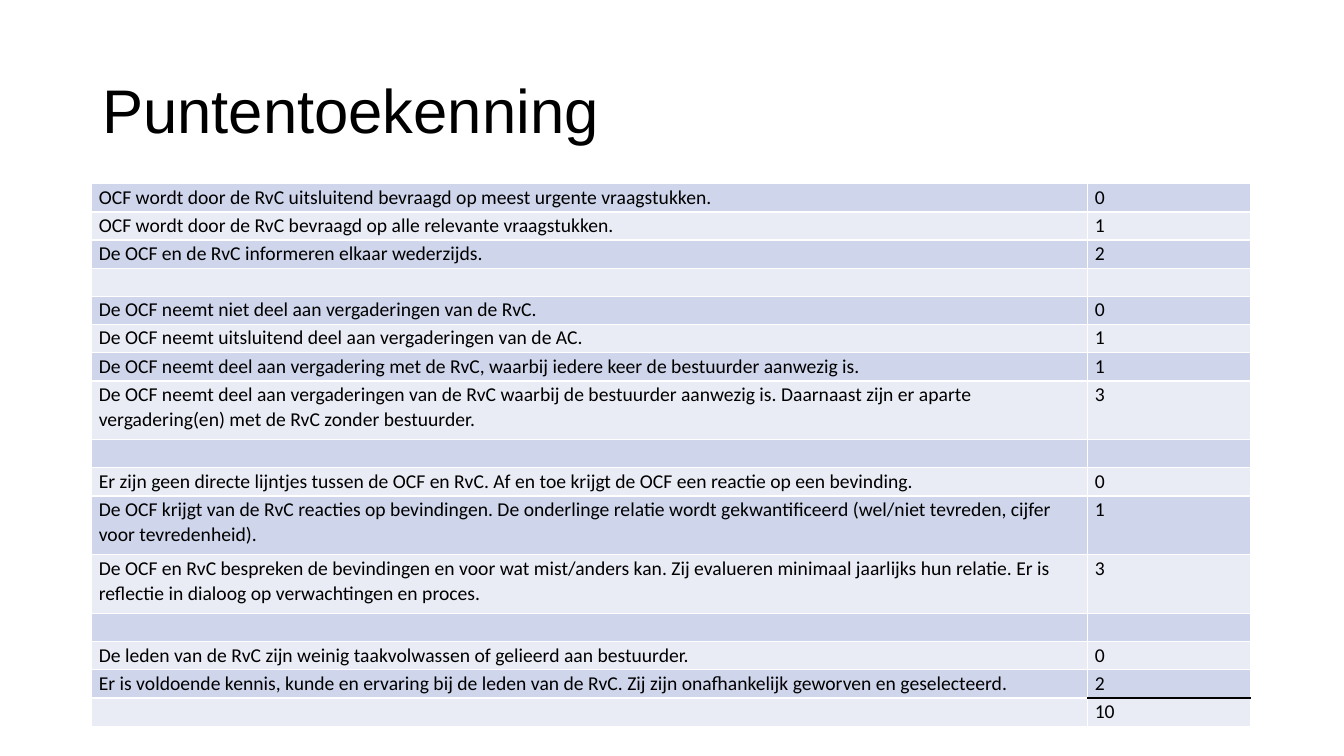
"""Build the slide 'Puntentoekenning' with its table of points."""
import lxml.etree
import pptx
import pptx.dml.color
import pptx.enum.text
import pptx.oxml.ns
import pptx.util

Cm = pptx.util.Cm
Pt = pptx.util.Pt

TITLE = "Puntentoekenning"
POINTS = [
    ("OCF wordt door de RvC uitsluitend bevraagd op meest urgente vraagstukken.", "0"),
    ("OCF wordt door de RvC bevraagd op alle relevante vraagstukken.", "1"),
    ("De OCF en de RvC informeren elkaar wederzijds.", "2"),
    ("", ""),
    ("De OCF neemt niet deel aan vergaderingen van de RvC.", "0"),
    ("De OCF neemt uitsluitend deel aan vergaderingen van de AC.", "1"),
    ("De OCF neemt deel aan vergadering met de RvC, waarbij iedere keer de bestuurder aanwezig is.", "1"),
    ("De OCF neemt deel aan vergaderingen van de RvC waarbij de bestuurder aanwezig is. "
     "Daarnaast zijn er aparte vergadering(en) met de RvC zonder bestuurder.", "3"),
    ("", ""),
    ("Er zijn geen directe lijntjes tussen de OCF en RvC. "
     "Af en toe krijgt de OCF een reactie op een bevinding.", "0"),
    ("De OCF krijgt van de RvC reacties op bevindingen. De onderlinge relatie wordt "
     "gekwantificeerd (wel/niet tevreden, cijfer voor tevredenheid).", "1"),
    ("De OCF en RvC bespreken de bevindingen en voor wat mist/anders kan. Zij evalueren "
     "minimaal jaarlijks hun relatie. Er is reflectie in dialoog op verwachtingen en proces.", "3"),
    ("", ""),
    ("De leden van de RvC zijn weinig taakvolwassen of gelieerd aan bestuurder.", "0"),
    ("Er is voldoende kennis, kunde en ervaring bij de leden van de RvC. "
     "Zij zijn onafhankelijk geworven en geselecteerd.", "2"),
    ("", "10"),
]
BANDS = ("CFD5EA", "E9EBF5")
WHITE, BLACK = "FFFFFF", "000000"
COLUMN_WIDTHS = (Cm(25.1), Cm(4.11))
LINE_HEIGHT, DOUBLE_HEIGHT = Cm(0.71), Cm(1.48)
LONGEST_LINE = 120


def color(value):
    return pptx.dml.color.RGBColor.from_string(value)


def write(frame, text, font="Calibri", size=14, line=1.07, after=8):
    para = frame.paragraphs[0]
    para.line_spacing = line
    para.space_after = Pt(after)
    if not text:
        para._p.get_or_add_endParaRPr().set("sz", str(size * 100))
        return
    span = para.add_run()
    span.text = text
    span.font.name = font
    span.font.size = Pt(size)
    span.font.color.rgb = color(BLACK)


def draw_borders(cell, top=WHITE, bottom=WHITE):
    properties = cell._tc.get_or_add_tcPr()
    sides = {"lnL": WHITE, "lnR": WHITE, "lnT": top, "lnB": bottom}
    for position, (side, value) in enumerate(sides.items()):
        border = lxml.etree.Element(pptx.oxml.ns.qn("a:" + side), w=str(Pt(1)))
        fill = lxml.etree.SubElement(border, pptx.oxml.ns.qn("a:solidFill"))
        lxml.etree.SubElement(fill, pptx.oxml.ns.qn("a:srgbClr"), val=value)
        properties.insert(position, border)


def add_title(page):
    box = page.shapes.add_textbox(Cm(2.33), Cm(1.01), Cm(29.21), Cm(3.68))
    box.text_frame.word_wrap = True
    box.text_frame.vertical_anchor = pptx.enum.text.MSO_ANCHOR.MIDDLE
    write(box.text_frame, TITLE, font="Arial", size=44, line=0.9, after=0)


def add_points(page):
    heights = [DOUBLE_HEIGHT if len(text) > LONGEST_LINE else LINE_HEIGHT for text, _ in POINTS]
    table = page.shapes.add_table(len(POINTS), len(COLUMN_WIDTHS), Cm(2.31), Cm(4.63),
                                  sum(COLUMN_WIDTHS), sum(heights)).table
    table.first_row = table.horz_banding = False
    for column, width in zip(table.columns, COLUMN_WIDTHS):
        column.width = width
    total_row = len(POINTS) - 1
    for row, (texts, height) in enumerate(zip(POINTS, heights)):
        table.rows[row].height = height
        for column, text in enumerate(texts):
            cell = table.cell(row, column)
            cell.margin_left = cell.margin_right = Cm(0.18)
            cell.margin_top = cell.margin_bottom = 0
            cell.fill.solid()
            cell.fill.fore_color.rgb = color(BANDS[row % 2])
            write(cell.text_frame, text)
            draw_borders(cell,
                         top=BLACK if column and row == total_row else WHITE,
                         bottom=BLACK if column and row == total_row - 1 else WHITE)


def main():
    deck = pptx.Presentation()
    deck.slide_width, deck.slide_height = Cm(33.87), Cm(19.05)
    page = deck.slides.add_slide(deck.slide_layouts[6])
    add_title(page)
    add_points(page)
    deck.save("out.pptx")


if __name__ == "__main__":
    main()
